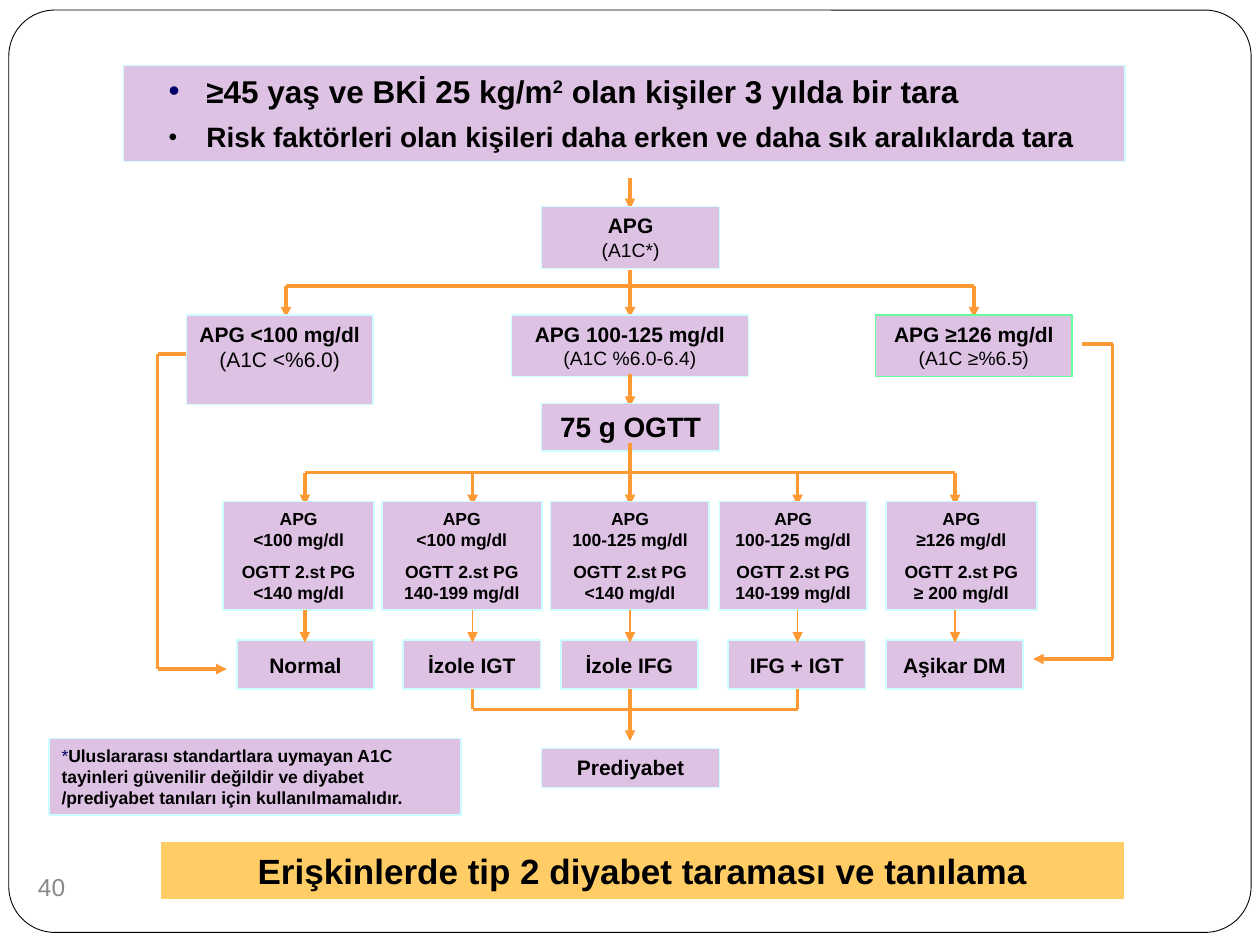
from dataclasses import dataclass

from lxml.etree import SubElement
from pptx import Presentation
from pptx.dml.color import RGBColor
from pptx.enum.shapes import MSO_CONNECTOR, MSO_SHAPE
from pptx.enum.text import MSO_ANCHOR, PP_ALIGN
from pptx.oxml.ns import qn
from pptx.util import Inches, Pt


@dataclass(frozen=True)
class Theme:
    font: str = "Arial"
    ink: str = "000000"
    navy: str = "000066"
    grey: str = "898989"
    page: str = "FFFFFF"
    lilac: str = "DEC2E4"
    ice: str = "CCFFFF"
    green: str = "66FF99"
    orange: str = "FF9933"
    amber: str = "FFCC66"
    title: int = 20
    lead: int = 18
    sub: int = 16
    number: int = 14
    label: int = 12
    detail: int = 11
    small: int = 10


def rgb(code):
    return RGBColor.from_string(code)


def add_run(p, text, size=12, color="000000", bold=True, font="Arial", baseline=0):
    r = p.add_run()
    r.text = text
    r.font.name, r.font.size, r.font.bold = font, Pt(size), bold
    r.font.color.rgb = rgb(color)
    if baseline:
        r.font._element.set("baseline", str(baseline))


class Flowchart:
    """Draws boxes, text and arrows of the chart on one slide."""

    def __init__(self, slide, theme):
        self.s, self.th = slide, theme

    def box(self, x, y, w, h, fill=None, line=None, weight=0.75,
            anchor=MSO_ANCHOR.TOP, kind=MSO_SHAPE.RECTANGLE):
        sp = self.s.shapes.add_shape(kind, Inches(x), Inches(y), Inches(w), Inches(h))
        sp.shadow.inherit = False
        if fill:
            sp.fill.solid()
            sp.fill.fore_color.rgb = rgb(fill)
        else:
            sp.fill.background()
        if line:
            sp.line.color.rgb = rgb(line)
            sp.line.width = Pt(weight)
        else:
            sp.line.fill.background()
        sp.text_frame.word_wrap = True
        sp.text_frame.vertical_anchor = anchor
        return sp

    def node(self, x, y, w, h, *rows, line=None, **style):
        sp = self.box(x, y, w, h, self.th.lilac, line or self.th.ice, **style)
        for row in rows:
            self.para(sp, row)
        return sp

    def para(self, sp, runs, align=PP_ALIGN.CENTER, after=0):
        tf = sp.text_frame
        p = tf.paragraphs[0] if not tf.text else tf.add_paragraph()
        p.alignment, p.space_after = align, Pt(after)
        for text, fmt in runs:
            add_run(p, text, font=self.th.font, **fmt)
        return p

    def bullet(self, sp, runs, color, percent):
        p = self.para(sp, runs, PP_ALIGN.LEFT, 6)
        pPr = p._p.get_or_add_pPr()
        pPr.set("marL", str(Inches(0.56)))
        pPr.set("indent", str(Inches(-0.3)))
        clr = SubElement(pPr, qn("a:buClr"))
        SubElement(clr, qn("a:srgbClr"), val=color)
        SubElement(pPr, qn("a:buSzPct"), val=str(percent * 1000))
        SubElement(pPr, qn("a:buFont"), typeface=self.th.font)
        SubElement(pPr, qn("a:buChar"), char="•")

    def line(self, x1, y1, x2, y2, arrow=False, weight=2):
        ln = self.s.shapes.add_connector(
            MSO_CONNECTOR.STRAIGHT, Inches(x1), Inches(y1), Inches(x2), Inches(y2))
        ln.line.color.rgb = rgb(self.th.orange)
        ln.line.width = Pt(weight)
        if arrow:
            SubElement(ln.line._get_or_add_ln(), qn("a:tailEnd"), type="triangle")
        SubElement(ln._element.spPr, qn("a:effectLst"))

    def drops(self, xs, y1, y2, arrow=True):
        for x in xs:
            self.line(x, y1, x, y2, arrow)


def main():
    th = Theme()
    prs = Presentation()
    prs.slide_width, prs.slide_height = Inches(10), Inches(7.5)
    fc = Flowchart(prs.slides.add_slide(prs.slide_layouts[6]), th)
    bold, plain = {"size": th.label}, {"size": th.detail, "bold": False}
    small, middle = {"size": th.small}, MSO_ANCHOR.MIDDLE

    frame = fc.box(0.07, 0.08, 9.86, 7.32, th.page, th.ink, 0.5,
                   kind=MSO_SHAPE.ROUNDED_RECTANGLE)
    frame.adjustments[0] = 0.05

    lead = {"size": th.lead}
    intro = fc.node(0.98, 0.52, 7.95, 0.76)
    fc.bullet(intro, [("≥45 yaş ve BKİ 25 kg/m", lead),
                      ("2", {**lead, "baseline": 30000}),
                      (" olan kişiler 3 yılda bir tara", lead)], th.navy, 100)
    fc.bullet(intro, [("Risk faktörleri olan kişileri daha erken ve daha sık "
                       "aralıklarda tara", {"size": th.sub})], th.ink, 88)

    mid, columns = 5, (2.42, 3.75, 5, 6.33, 7.58)
    fc.line(mid, 1.41, mid, 1.66, True)
    fc.line(mid, 2.14, mid, 2.27)
    fc.line(2.27, 2.27, 7.73, 2.27)
    fc.drops((2.27, mid, 7.73), 2.27, 2.52)

    for x, y, w, h, head, note, size, edge in (
            (4.3, 1.64, 1.41, 0.49, "APG", "(A1C*)", th.detail, th.ice),
            (1.48, 2.5, 1.48, 0.71, "APG <100 mg/dl", "(A1C <%6.0)", th.label, th.ice),
            (4.06, 2.5, 1.88, 0.49, "APG 100-125 mg/dl", "(A1C %6.0-6.4)", th.detail, th.ice),
            (6.95, 2.5, 1.56, 0.49, "APG ≥126 mg/dl", "(A1C ≥%6.5)", th.detail, th.green)):
        fc.node(x, y, w, h, [(head, bold)], [(note, {**plain, "size": size})], line=edge)

    fc.line(mid, 2.97, mid, 3.23, True)
    fc.node(4.3, 3.2, 1.41, 0.38, [("75 g OGTT", {"size": th.sub})])
    fc.line(mid, 3.52, mid, 3.75)
    fc.line(columns[0], 3.75, columns[-1], 3.75)
    fc.drops(columns, 3.75, 4.01)

    outcomes = (
        (1.77, 1.2, "<100 mg/dl", "<140 mg/dl", 1.88, "Normal"),
        (3.03, 1.27, "<100 mg/dl", "140-199 mg/dl", 3.2, "İzole IGT"),
        (4.37, 1.26, "100-125 mg/dl", "<140 mg/dl", 4.45, "İzole IFG"),
        (5.71, 1.17, "100-125 mg/dl", "140-199 mg/dl", 5.78, "IFG + IGT"),
        (7.03, 1.2, "≥126 mg/dl", "≥ 200 mg/dl", 7.03, "Aşikar DM"))
    for col, (x, w, fasting, load, left, result) in zip(columns, outcomes):
        sp = fc.node(x, 3.98, w, 0.86, [("APG", small)], weight=1, anchor=middle)
        fc.para(sp, [(fasting, small)], after=6)
        fc.para(sp, [(f"OGTT 2.st PG {load}", small)])
        fc.node(left, 5.08, 1.09, 0.39, [(result, bold)], weight=1, anchor=middle)
        fc.line(col, 4.84, col, 5.1, True, 2 if col == columns[0] else 0.75)

    fc.line(1.48, 2.81, 1.25, 2.81)
    fc.line(1.25, 2.81, 1.25, 5.31)
    fc.line(1.25, 5.31, 1.8, 5.31, True)
    fc.line(8.59, 2.73, 8.83, 2.73)
    fc.line(8.83, 2.73, 8.83, 5.23)
    fc.line(8.83, 5.23, 8.2, 5.23, True)

    fc.drops(columns[1:4], 5.47, 5.63, arrow=False)
    fc.line(columns[1], 5.63, columns[3], 5.63)
    fc.line(mid, 5.63, mid, 5.88, True)
    fc.node(4.3, 5.94, 1.41, 0.31, [("Prediyabet", bold)])

    banner = fc.box(1.28, 6.69, 7.64, 0.44, th.amber, th.amber)
    fc.para(banner, [("Erişkinlerde tip 2 diyabet taraması ve tanılama",
                      {"size": th.title})])
    note = fc.node(0.39, 5.86, 3.27, 0.61)
    fc.para(note, [("*", {**small, "color": th.navy, "bold": False}),
                   ("Uluslararası standartlara uymayan A1C tayinleri güvenilir "
                    "değildir ve diyabet /prediyabet tanıları için "
                    "kullanılmamalıdır.", small)], PP_ALIGN.LEFT)

    number = fc.box(0.16, 6.79, 0.5, 0.5, anchor=middle, kind=MSO_SHAPE.OVAL)
    tf = number.text_frame
    tf.margin_left = tf.margin_right = tf.margin_top = tf.margin_bottom = 0
    tf.word_wrap = False
    fc.para(number, [("40", {"size": th.number, "color": th.grey, "bold": False})])
    prs.save("out.pptx")


if __name__ == "__main__":
    main()
